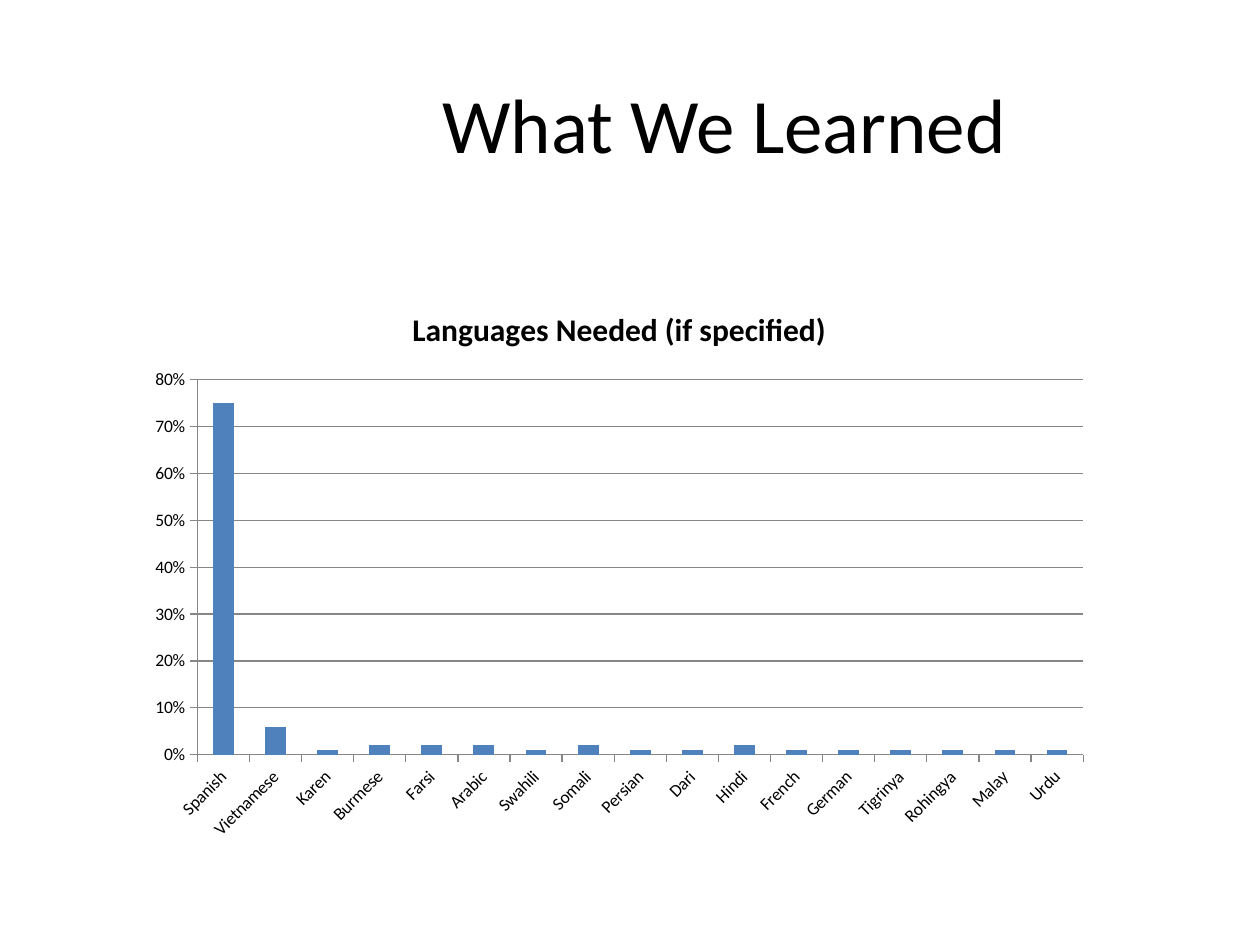
from pptx import Presentation
from pptx.chart.data import CategoryChartData
from pptx.dml.color import RGBColor
from pptx.enum.chart import XL_CHART_TYPE as ChartType, XL_TICK_MARK as Tick
from pptx.enum.text import MSO_ANCHOR as Anchor, PP_ALIGN as Align
from pptx.util import Inches, Pt

# Content
HEADING = "What We Learned"
CHART_TITLE = "Languages Needed (if specified)"
LANGUAGES = [
    ("Spanish", 0.75), ("Vietnamese", 0.06), ("Karen", 0.01),
    ("Burmese", 0.02), ("Farsi", 0.02), ("Arabic", 0.02),
    ("Swahili", 0.01), ("Somali", 0.02), ("Persian", 0.01),
    ("Dari", 0.01), ("Hindi", 0.02), ("French", 0.01),
    ("German", 0.01), ("Tigrinya", 0.01), ("Rohingya", 0.01),
    ("Malay", 0.01), ("Urdu", 0.01),
]
COLORS = {"text": "000000", "bar": "4F81BD", "line": "868686"}
FONT = "Calibri"


def color(name):
    return RGBColor.from_string(COLORS[name])


def style_font(font, size, bold=False):
    font.name = FONT
    font.size = Pt(size)
    font.bold = bold
    font.color.rgb = color("text")


def style_line(line):
    line.color.rgb = color("line")
    line.width = Pt(0.75)


deck = Presentation()
deck.slide_width, deck.slide_height = Inches(10), Inches(7.5)
page = deck.slides.add_slide(deck.slide_layouts[6])

# Heading
box = page.shapes.add_textbox(Inches(1.5), Inches(0.17), Inches(8.5), Inches(1.61))
frame = box.text_frame
frame.word_wrap = True
frame.vertical_anchor = Anchor.MIDDLE
para = frame.paragraphs[0]
para.alignment = Align.CENTER
span = para.add_run()
span.text = HEADING
style_font(span.font, 44)

# Column chart
data = CategoryChartData(number_format="0%")
data.categories = [name for name, share in LANGUAGES]
data.add_series(CHART_TITLE, [share for name, share in LANGUAGES])
chart = page.shapes.add_chart(
    ChartType.COLUMN_CLUSTERED, Inches(1.08), Inches(2.25), Inches(7.67), Inches(4.5), data
).chart
style_font(chart.font, 10)
chart.has_legend = False
chart.has_title = True
title_span = chart.chart_title.text_frame.paragraphs[0].add_run()
title_span.text = CHART_TITLE
style_font(title_span.font, 18, bold=True)

# Bars
plot = chart.plots[0]
plot.gap_width = 150
plot.vary_by_categories = False
bars = plot.series[0]
bars.invert_if_negative = False
bars.format.fill.solid()
bars.format.fill.fore_color.rgb = color("bar")

# Axes and gridlines
for axis in (chart.category_axis, chart.value_axis):
    axis.major_tick_mark = Tick.OUTSIDE
    axis.minor_tick_mark = Tick.NONE
    style_line(axis.format.line)
shares = chart.value_axis
shares.minimum_scale, shares.maximum_scale, shares.major_unit = 0, 0.8, 0.1
shares.tick_labels.number_format = "0%"
shares.tick_labels.number_format_is_linked = False
shares.has_major_gridlines = True
style_line(shares.major_gridlines.format.line)

deck.save("out.pptx")
